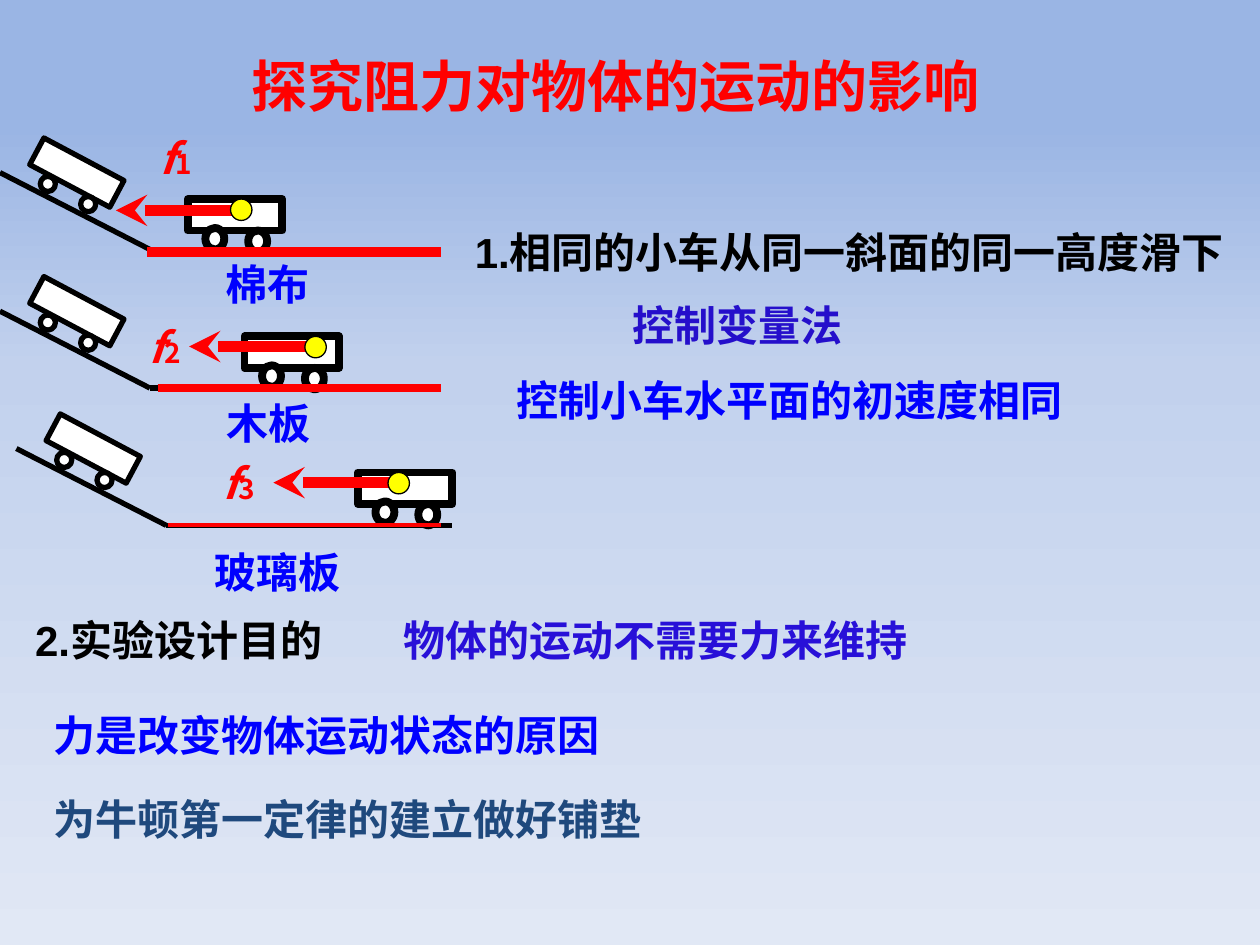
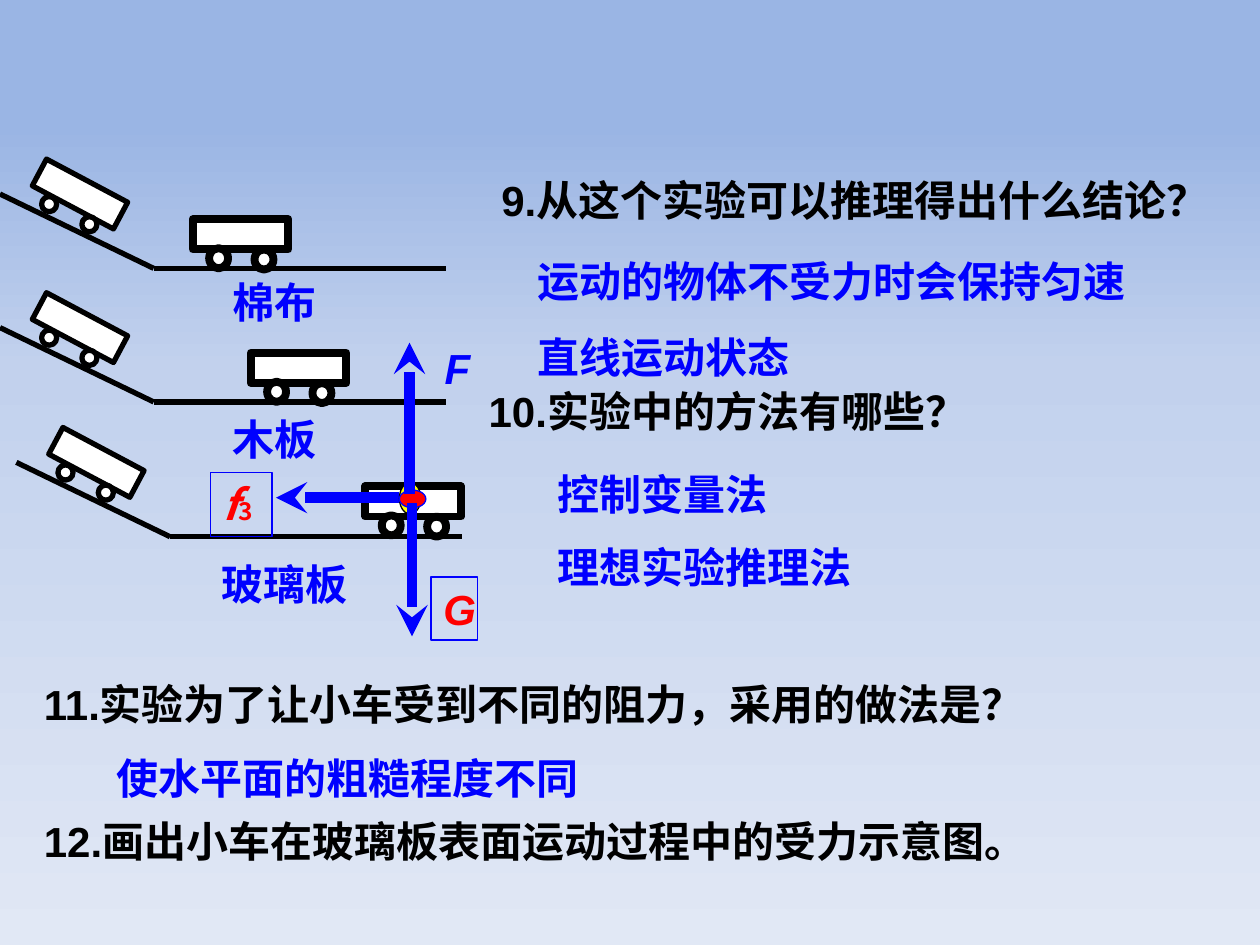
from lxml.etree import SubElement
from pptx import Presentation
from pptx.dml.color import RGBColor
from pptx.enum.lang import MSO_LANGUAGE_ID as Lang
from pptx.enum.shapes import MSO_CONNECTOR as Connector, MSO_SHAPE as Shape
from pptx.enum.text import MSO_ANCHOR as Anchor, MSO_AUTO_SIZE as AutoSize, PP_ALIGN as Align
from pptx.oxml import parse_xml
from pptx.oxml.ns import nsdecls, qn
from pptx.util import Pt

PX = 9144
SIZE = (1000, 750)
COLORS = {
    "black": "000000", "white": "FFFFFF", "red": "FF0000", "blue": "0000FF",
    "yellow": "FFFF00", "indigo": "250FCB", "violet": "2810D8", "navy": "1F497D",
}
BACKDROP = [(13, "9AB5E4"), (39, "C2D1ED"), (100, "E1E8F5")]
EAST_ASIAN = "Noto Sans CJK SC"
BODY = {"name": "Arial", "size": Pt(24), "bold": True, "language_id": Lang.SIMPLIFIED_CHINESE}
FORMATS = {
    "body": BODY,
    "title": BODY | {"size": Pt(32)},
    "force": BODY | {"italic": True},
    "friction": BODY | {"name": EAST_ASIAN, "italic": True},
    "index16": BODY | {"name": EAST_ASIAN, "size": Pt(16), "italic": False},
    "index14": BODY | {"name": EAST_ASIAN, "size": Pt(14), "italic": False},
}
LEFT_MIDDLE = {"anchor": Anchor.MIDDLE}
CENTERED = {"align": Align.CENTER}
LABEL = {"anchor": Anchor.MIDDLE, "align": Align.CENTER, "grow": False}

RESISTANCE = {
    "tracks": [(0, 137), (0, 247), (13, 356)],
    "ramp": (119, 61), "floor": 227,
    "sliding": {"offset": (25, -12), "body": (72, 24), "wheel": (12, 12),
                "wheels": [(7, 15), (39, 31)], "line": 3, "rotation": 28},
    "carts": [(149, 158), (194, 267), (284, 375)],
    "rolling": {"body": (75, 25), "wheel": (15, 17),
                "wheels": [(14, 23), (48, 25)], "line": 4.5, "rotation": 0},
    "surfaces": [("棉布", (119, 200, 187, 50)), ("木板", (112, 308, 202, 55)),
                 ("玻璃板", (127, 433, 187, 42))],
    "coverings": [((117, 200), (350, 200), 6), ((125, 308), (350, 308), 4.5),
                  ((133, 417), (350, 417), 2.25)],
    "statements": [
        ("探究阻力对物体的运动的影响", (190, 36, 606, 64), "red", "title", {}),
        ("1.相同的小车从同一斜面的同一高度滑下", (367, 175, 633, 51), "black", "body", {}),
        ("控制变量法", (492, 233, 189, 51), "indigo", "body", {}),
        ("控制小车水平面的初速度相同", (400, 292, 458, 51), "blue", "body", {}),
        ("2.实验设计目的", (18, 483, 257, 51), "black", "body", {}),
        ("力是改变物体运动状态的原因", (33, 558, 458, 51), "blue", "body", {}),
        ("为牛顿第一定律的建立做好铺垫", (33, 625, 491, 51), "navy", "body", {}),
        ("物体的运动不需要力来维持", (283, 483, 475, 51), "violet", "body", CENTERED),
    ],
    "forces": [
        ("arrow", (92, 167), (190, 167), "red"),
        ("arrow", (150, 275), (248, 275), "red"),
        ("arrow", (217, 383), (315, 383), "red"),
        ("dot", (183, 158, 17, 17), "yellow", "black"),
        ("dot", (242, 267, 17, 17), "yellow", "black"),
        ("dot", (308, 375, 17, 17), "yellow", "black"),
    ],
    "symbols": [
        ([("f", "friction"), ("1", "index16")], (117, 100, 49, 51), "red", None),
        ([("f", "friction"), ("2", "index16")], (108, 250, 49, 51), "red", None),
        ([("f", "friction"), ("3", "index16")], (167, 358, 49, 51), "red", None),
    ],
}
INFERENCE = {
    "tracks": [(0, 154), (0, 260), (13, 367)],
    "ramp": (122, 59), "floor": 232,
    "sliding": {"offset": (27, -12), "body": (73, 24), "wheel": (12, 12),
                "wheels": [(6, 14), (38, 30)], "line": 3, "rotation": 28},
    "carts": [(153, 174), (199, 280), (290, 386)],
    "rolling": {"body": (76, 24), "wheel": (15, 16),
                "wheels": [(13, 23), (49, 24)], "line": 4.5, "rotation": 0},
    "surfaces": [("棉布", (122, 215, 191, 49)), ("木板", (115, 321, 206, 54)),
                 ("玻璃板", (130, 443, 191, 41))],
    "coverings": [],
    "statements": [
        ("9.从这个实验可以推理得出什么结论？", (388, 133, 612, 51), "black", "body", LEFT_MIDDLE),
        ("运动的物体不受力时会保持匀速直线运动状态", (417, 182, 517, 122), "blue", "body",
         LEFT_MIDDLE | {"spacing": 1.5}),
        ("10.实验中的方法有哪些？", (378, 301, 431, 51), "black", "body", {}),
        ("控制变量法", (433, 367, 208, 51), "blue", "body", {}),
        ("理想实验推理法", (433, 425, 275, 51), "blue", "body", {}),
        ("11.实验为了让小车受到不同的阻力，采用的做法是？", (25, 533, 833, 51), "black", "body",
         LEFT_MIDDLE),
        ("使水平面的粗糙程度不同", (83, 592, 409, 51), "blue", "body", LEFT_MIDDLE),
        ("12.画出小车在玻璃板表面运动过程中的受力示意图。", (25, 642, 833, 51), "black", "body",
         LEFT_MIDDLE),
    ],
    "forces": [
        ("arrow", (219, 395), (317, 395), "blue"),
        ("dot", (317, 383, 17, 25), "yellow", "black"),
        ("dot", (317, 389, 21, 14), "red", "blue"),
        ("arrow", (327, 505), (327, 399), "blue"),
        ("arrow", (325, 272), (325, 392), "blue"),
    ],
    "symbols": [
        ([("f", "friction"), ("3", "index14")], (167, 375, 49, 51), "red", "blue"),
        ([("G", "force")], (342, 458, 37, 50), "red", "blue"),
        ([("F", "force")], (343, 267, 37, 50), "blue", None),
    ],
}


def emu(lengths):
    return [length * PX for length in lengths]


def shift(point, offset):
    return point[0] + offset[0], point[1] + offset[1]


def rgb(color):
    return RGBColor.from_string(COLORS[color])


def paint_backdrop(slide):
    stops = "".join(f'<a:gs pos="{pos * 1000}"><a:srgbClr val="{color}"/></a:gs>'
                    for pos, color in BACKDROP)
    fill = slide.background.fill
    fill.solid()
    solid = slide.background._cSld.bg.bgPr.find(qn("a:solidFill"))
    solid.getparent().replace(solid, parse_xml(
        f'<a:gradFill {nsdecls("a")} rotWithShape="1"><a:gsLst>{stops}</a:gsLst>'
        '<a:lin ang="5400000" scaled="0"/></a:gradFill>'))


def add_line(slide, start, end, color, width, arrow=False):
    line = slide.shapes.add_connector(Connector.STRAIGHT, *emu(start + end))
    line.line.color.rgb = rgb(color)
    line.line.width = Pt(width)
    if arrow:
        SubElement(line.line._get_or_add_ln(), qn("a:headEnd"), type="stealth")
    SubElement(line._element.spPr, qn("a:effectLst"))


def add_solid(slide, preset, box, fill, outline, width, rotation=0):
    solid = slide.shapes.add_shape(preset, *emu(box))
    solid.shadow.inherit = False
    solid.rotation = rotation
    solid.fill.solid()
    solid.fill.fore_color.rgb = rgb(fill)
    solid.line.color.rgb = rgb(outline)
    solid.line.width = Pt(width)


def add_cart(slide, corner, cart):
    look = ("white", "black", cart["line"], cart["rotation"])
    add_solid(slide, Shape.RECTANGLE, corner + cart["body"], *look)
    for offset in cart["wheels"]:
        add_solid(slide, Shape.OVAL, shift(corner, offset) + cart["wheel"], *look)


def add_text(slide, pieces, box, color, anchor=Anchor.TOP, align=Align.LEFT,
             grow=True, wrap=True, spacing=None, outline=None):
    holder = slide.shapes.add_textbox(*emu(box))
    if outline:
        holder.line.color.rgb = rgb(outline)
        holder.line.width = Pt(0.75)
    frame = holder.text_frame
    frame.word_wrap = wrap
    frame.auto_size = AutoSize.SHAPE_TO_FIT_TEXT if grow else AutoSize.NONE
    frame.vertical_anchor = anchor
    paragraph = frame.paragraphs[0]
    paragraph.alignment = align
    paragraph.line_spacing = spacing
    for words, style in pieces:
        run = paragraph.add_run()
        run.text = words
        for attribute, value in FORMATS[style].items():
            setattr(run.font, attribute, value)
        run.font.color.rgb = rgb(color)
        SubElement(run.font._element, qn("a:ea"), typeface=EAST_ASIAN)


def build_slide(deck, lesson):
    slide = deck.slides.add_slide(deck.slide_layouts[6])
    paint_backdrop(slide)
    for top in lesson["tracks"]:
        foot = shift(top, lesson["ramp"])
        add_line(slide, top, foot, "black", 3)
        add_line(slide, foot, shift(foot, (lesson["floor"], 0)), "black", 3)
        add_cart(slide, shift(top, lesson["sliding"]["offset"]), lesson["sliding"])
    for surface, box in lesson["surfaces"]:
        add_text(slide, [(surface, "body")], box, "blue", **LABEL)
    for corner in lesson["carts"]:
        add_cart(slide, corner, lesson["rolling"])
    for start, end, width in lesson["coverings"]:
        add_line(slide, start, end, "red", width)
    for words, box, color, style, layout in lesson["statements"]:
        add_text(slide, [(words, style)], box, color, **layout)
    for kind, *parts in lesson["forces"]:
        if kind == "arrow":
            add_line(slide, *parts, 6, arrow=True)
        else:
            add_solid(slide, Shape.OVAL, *parts, 0.75)
    for pieces, box, color, outline in lesson["symbols"]:
        add_text(slide, pieces, box, color, wrap=False, outline=outline)


def main():
    deck = Presentation()
    deck.slide_width, deck.slide_height = emu(SIZE)
    for lesson in (RESISTANCE, INFERENCE):
        build_slide(deck, lesson)
    deck.save("out.pptx")


if __name__ == "__main__":
    main()
